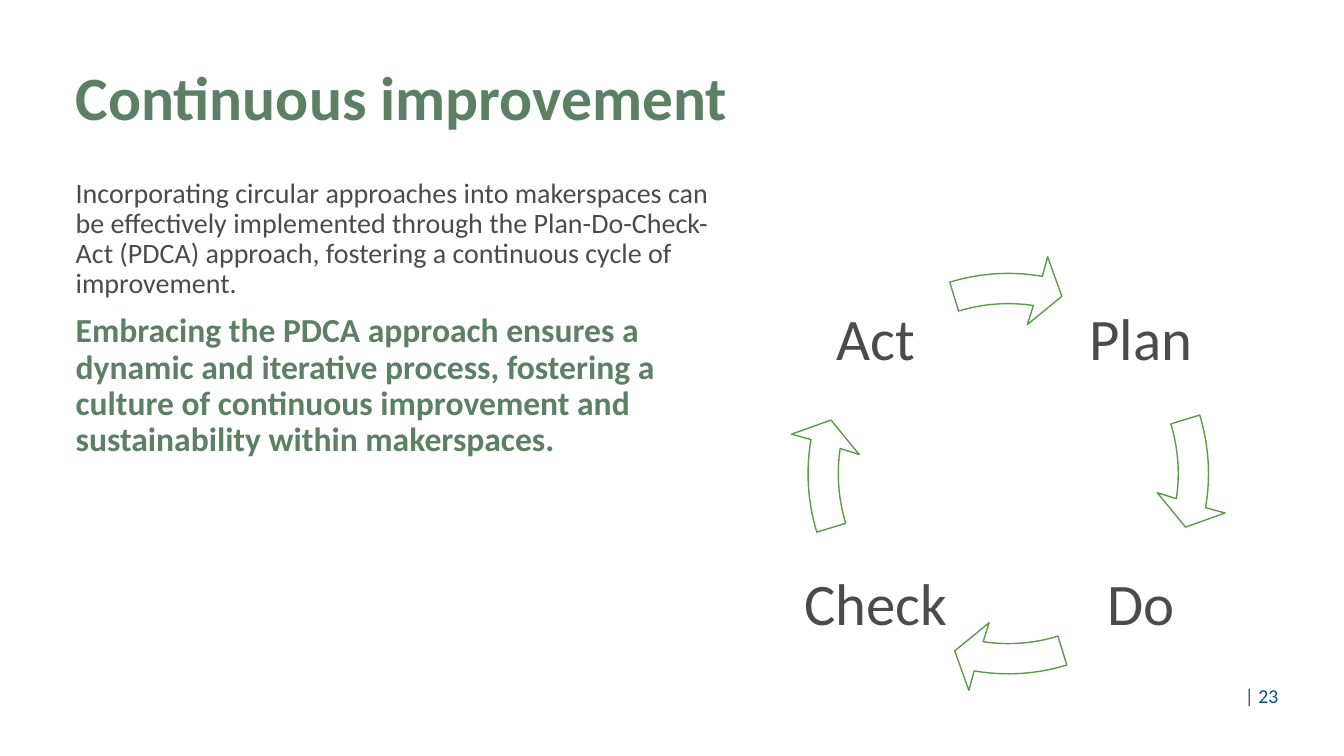
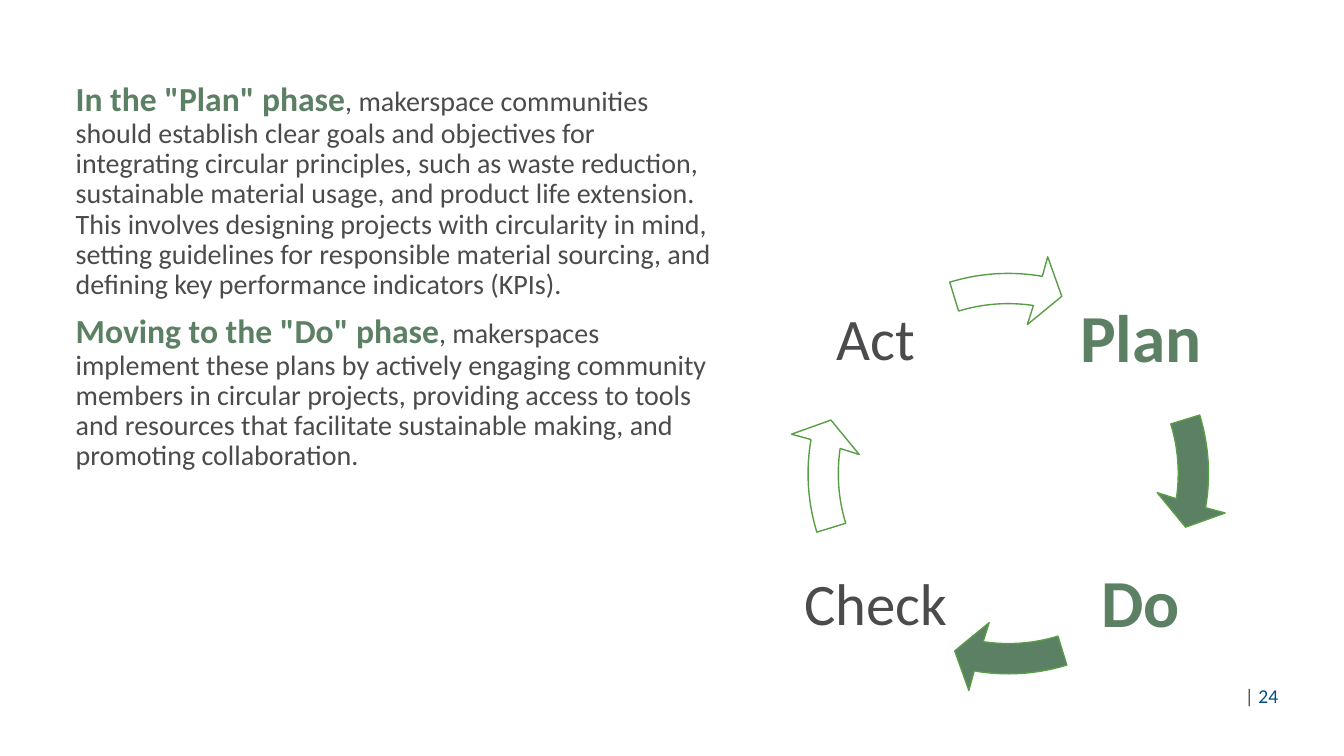
from math import cos, radians, sin, tan

from lxml import etree
from pptx import Presentation
from pptx.dml.color import RGBColor
from pptx.enum.text import MSO_ANCHOR, PP_ALIGN
from pptx.oxml.ns import qn
from pptx.util import Pt

TOP, MIDDLE = MSO_ANCHOR.TOP, MSO_ANCHOR.MIDDLE
LEFT, CENTER = PP_ALIGN.LEFT, PP_ALIGN.CENTER

COLORS = {
    "green": "5C8064",
    "outline": "599D47",
    "gray": "4B4B4D",
    "blue": "004E84",
    "white": "FFFFFF",
}
FONT = "Calibri"
STYLES = {
    "title": {"size": 44, "bold": True, "color": "green"},
    "body": {"size": 20, "bold": False, "color": "gray"},
    "accent": {"size": 24, "bold": True, "color": "green"},
    "phase": {"size": 42, "bold": False, "color": "gray"},
    "active phase": {"size": 48, "bold": True, "color": "green"},
    "page mark": {"size": 14, "bold": False, "color": "gray"},
    "page number": {"size": 14, "bold": False, "color": "blue"},
}

PHASES = ["Plan", "Do", "Check", "Act"]
SLIDES = [
    {
        "page": "23",
        "active": [],
        "texts": [
            ((47, 44.3, 489.6, 74.2), [[("Continuous improvement", "title")]]),
            ((47, 124.3, 472.3, 145.4), [
                [("Incorporating circular approaches into makerspaces can be "
                  "effectively implemented through the Plan-Do-Check-Act (PDCA) "
                  "approach, fostering a continuous cycle of improvement.", "body")],
                [("Embracing the PDCA approach ensures a dynamic and iterative "
                  "process, fostering a culture of continuous improvement and "
                  "sustainability within makerspaces.", "accent")],
            ]),
        ],
    },
    {
        "page": "24",
        "active": ["Plan", "Do"],
        "texts": [
            ((47, 55.7, 472.3, 214.6), [
                [("In the \"Plan\" phase", "accent"),
                 (", makerspace communities should establish clear goals and "
                  "objectives for integrating circular principles, such as waste "
                  "reduction, sustainable material usage, and product life "
                  "extension. This involves designing projects with circularity "
                  "in mind, setting guidelines for responsible material sourcing, "
                  "and defining key performance indicators (KPIs).", "body")],
                [("Moving to the \"Do\" phase", "accent"),
                 (", makerspaces implement these plans by actively engaging "
                  "community members in circular projects, providing access to "
                  "tools and resources that facilitate sustainable making, and "
                  "promoting collaboration.", "body")],
            ]),
        ],
    },
]

PAGE_BOX = (889.2, 488.5, 49, 17.3)
CYCLE_X, CYCLE_Y, CYCLE_SIZE = 720.2, 338.3, 315.4
LABEL_OFFSET, LABEL_SIZE = 94.7, 111.6
OUTER_RADIUS, INNER_RADIUS = 143, 121.4
ARC_START, OUTER_END, INNER_END = -17, 9.8, 8.5
ARROW_HEAD = [(157.4, 10.3), (132.3, 16.8), (107.3, 7.3)]


def rgb(name):
    return RGBColor.from_string(COLORS[name])


def add_text(slide, box, paragraphs, anchor=TOP, align=LEFT, insets=(7.2, 3.6), spacing=0.9):
    shape = slide.shapes.add_textbox(*map(Pt, box))
    frame = shape.text_frame
    horizontal, vertical = map(Pt, insets)
    frame_format = {
        "word_wrap": True,
        "vertical_anchor": anchor,
        "margin_left": horizontal,
        "margin_right": horizontal,
        "margin_top": vertical,
        "margin_bottom": vertical,
    }
    for name, value in frame_format.items():
        setattr(frame, name, value)
    for index, runs in enumerate(paragraphs):
        paragraph = frame.add_paragraph() if index else frame.paragraphs[0]
        paragraph_format = {
            "alignment": align,
            "line_spacing": spacing,
            "space_before": Pt(10 if index else 0),
        }
        for name, value in paragraph_format.items():
            setattr(paragraph, name, value)
        for text, style_name in runs:
            style = STYLES[style_name]
            run = paragraph.add_run()
            run.text = text
            font_format = {"name": FONT, "size": Pt(style["size"]), "bold": style["bold"]}
            for name, value in font_format.items():
                setattr(run.font, name, value)
            run.font.color.rgb = rgb(style["color"])


def arc_curve(radius, start, end):
    bend = 4 / 3 * tan(radians(end - start) / 4)
    reach = radius * (1 + bend ** 2) ** 0.5
    swing = (end - start) / 3
    return [(reach, start + swing), (reach, end - swing), (radius, end)]


ARROW_COMMANDS = [
    ("moveTo", [(OUTER_RADIUS, ARC_START)]),
    ("cubicBezTo", arc_curve(OUTER_RADIUS, ARC_START, OUTER_END)),
    *[("lnTo", [point]) for point in ARROW_HEAD],
    ("lnTo", [(INNER_RADIUS, INNER_END)]),
    ("cubicBezTo", arc_curve(INNER_RADIUS, INNER_END, ARC_START)),
    ("close", []),
]


def add_arrow(slide, turn, fill):
    half = CYCLE_SIZE / 2
    left, top = Pt(CYCLE_X - half), Pt(CYCLE_Y - half)
    right, bottom = left + Pt(CYCLE_SIZE), top + Pt(CYCLE_SIZE)
    builder = slide.shapes.build_freeform(left, top)
    builder.add_line_segments([(right, top), (right, bottom)], close=True)
    shape = builder.convert_to_shape()
    outline = next(shape.element.iter(qn("a:path")))
    for command in list(outline):
        outline.remove(command)
    for name, points in ARROW_COMMANDS:
        command = etree.SubElement(outline, qn(f"a:{name}"))
        for radius, angle in points:
            direction = radians(angle + turn)
            etree.SubElement(
                command, qn("a:pt"),
                x=str(int(Pt(half + radius * cos(direction)))),
                y=str(int(Pt(half + radius * sin(direction)))),
            )
    shape.shadow.inherit = False
    shape.fill.solid()
    shape.fill.fore_color.rgb = rgb(fill)
    shape.line.color.rgb = rgb("outline")
    shape.line.width = Pt(1)


def add_cycle(slide, active):
    for index, phase in enumerate(PHASES):
        is_active = phase in active
        side_x = 1 if index in (0, 1) else -1
        side_y = 1 if index in (1, 2) else -1
        left = CYCLE_X + side_x * LABEL_OFFSET - LABEL_SIZE / 2
        top = CYCLE_Y + side_y * LABEL_OFFSET - LABEL_SIZE / 2
        style = "active phase" if is_active else "phase"
        add_text(slide, (left, top, LABEL_SIZE, LABEL_SIZE), [[(phase, style)]],
                 MIDDLE, CENTER, (4.5, 4.5))
        add_arrow(slide, 90 * index, "green" if is_active else "white")


def main():
    presentation = Presentation()
    presentation.slide_width = Pt(960)
    presentation.slide_height = Pt(540)
    blank = presentation.slide_layouts[6]
    for content in SLIDES:
        slide = presentation.slides.add_slide(blank)
        add_text(slide, PAGE_BOX, [[("| ", "page mark"), (content["page"], "page number")]],
                 MIDDLE, insets=(0, 0), spacing=1.0)
        for box, paragraphs in content["texts"]:
            add_text(slide, box, paragraphs)
        add_cycle(slide, content["active"])
    presentation.save("out.pptx")


if __name__ == "__main__":
    main()
